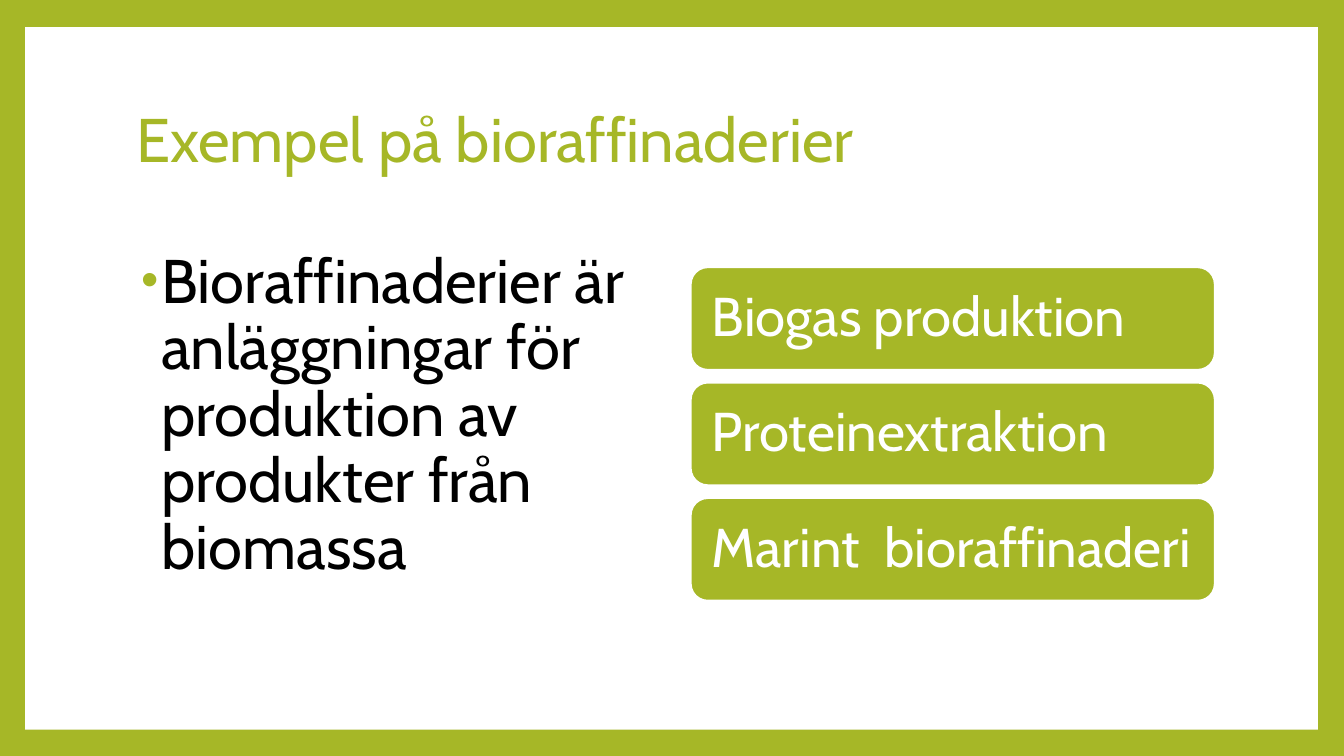
from lxml import etree
from pptx import Presentation
from pptx import util as u
from pptx.dml.color import RGBColor
from pptx.enum import shapes, text
from pptx.oxml.ns import qn

FONT = "Cabin"
GREEN, WHITE, BLACK = "A6B727", "FFFFFF", "000000"
STEPS = ["Biogas produktion", "Proteinextraktion", "Marint  bioraffinaderi"]


def paint(color, value):
    color.rgb = RGBColor.from_string(value)


def fill(part, value):
    part.fill.solid()
    paint(part.fill.fore_color, value)


def place(shape, box):
    shape.left, shape.top, shape.width, shape.height = map(u.Inches, box)


def write(frame, words, size, color, anchor):
    frame.word_wrap = True
    frame.auto_size = text.MSO_AUTO_SIZE.NONE
    frame.vertical_anchor = anchor
    para = frame.paragraphs[0]
    para.alignment = text.PP_ALIGN.LEFT
    para.line_spacing = 0.9
    run = para.add_run()
    run.text = words
    run.font.name = FONT
    run.font.size = u.Pt(size)
    paint(run.font.color, color)
    return para


def bullet(para, color):
    props = para._p.get_or_add_pPr()
    props.set("marL", str(u.Inches(0.25)))
    props.set("indent", str(u.Inches(-0.2)))
    tint = etree.SubElement(props, qn("a:buClr"))
    etree.SubElement(tint, qn("a:srgbClr"), val=color)
    etree.SubElement(props, qn("a:buSzPct"), val="80000")
    etree.SubElement(props, qn("a:buFont"), typeface="Arial")
    etree.SubElement(props, qn("a:buChar"), char="•")


# White panel inside the green frame
def panel(slide, box):
    fill(slide.background, GREEN)
    sheet = slide.shapes.add_shape(
        shapes.MSO_SHAPE.RECTANGLE, *map(u.Inches, box))
    sheet.shadow.inherit = False
    fill(sheet, WHITE)
    sheet.line.fill.background()
    # Keep the panel behind the placeholders
    tree = slide.shapes._spTree
    tree.remove(sheet._element)
    tree.insert(2, sheet._element)


# Heading
def heading(slide, box, words):
    title = slide.shapes.title
    place(title, box)
    write(title.text_frame, words, 44, GREEN, text.MSO_ANCHOR.MIDDLE)


# Bulleted definition
def body(slide, box, words):
    holder = slide.placeholders[1]
    place(holder, box)
    para = write(holder.text_frame, words, 44, BLACK, text.MSO_ANCHOR.TOP)
    para.space_before = u.Pt(14)
    bullet(para, GREEN)


# Stack of rounded cards, evenly spaced over the box
def cards(slide, box, names, high=1.02):
    left, top, wide, tall = box
    step = (tall - high) / (len(names) - 1)
    for i, name in enumerate(names):
        spot = (left, top + i * step, wide, high)
        card = slide.shapes.add_shape(
            shapes.MSO_SHAPE.ROUNDED_RECTANGLE, *map(u.Inches, spot))
        card.shadow.inherit = False
        fill(card, GREEN)
        paint(card.line.color, WHITE)
        card.line.width = u.Pt(1.5)
        frame = card.text_frame
        frame.margin_left = frame.margin_right = u.Inches(0.16)
        frame.margin_top = frame.margin_bottom = u.Inches(0.16)
        write(frame, name, 39, WHITE, text.MSO_ANCHOR.MIDDLE)


def main():
    deck = Presentation()
    deck.slide_width, deck.slide_height = u.Inches(13.33), u.Inches(7.5)
    slide = deck.slides.add_slide(deck.slide_layouts[1])
    panel(slide, (0.25, 0.27, 12.82, 6.97))
    heading(slide, (1.25, 0.67, 10.8, 1.48), "Exempel på bioraffinaderier")
    body(slide, (1.25, 2.43, 5.2, 4.22),
         "Bioraffinaderier är anläggningar för produktion av "
         "produkter från biomassa")
    cards(slide, (6.85, 2.65, 5.2, 3.31), STEPS)
    deck.save("out.pptx")


if __name__ == "__main__":
    main()
